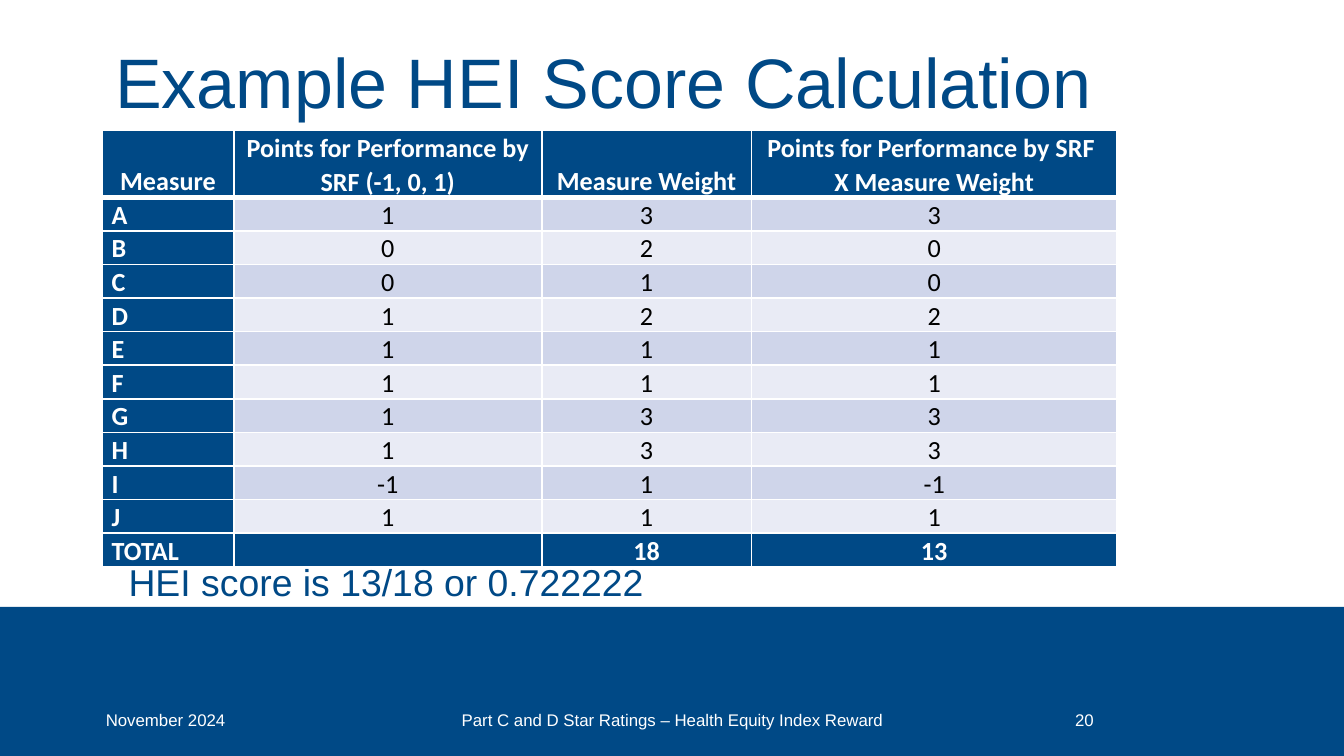
from copy import deepcopy

from lxml.etree import SubElement
from pptx import Presentation
from pptx.dml.color import RGBColor as RGB
from pptx.enum.shapes import MSO_SHAPE as Shape
from pptx.enum.text import MSO_ANCHOR as Anchor, PP_ALIGN as Align
from pptx.oxml.ns import qn
from pptx.util import Cm, Pt

COLORS = {"navy": "004986", "white": "FFFFFF", "black": "000000",
          "odd": "CFD5EA", "even": "E9EBF5"}
HEADERS = ["Measure", "Points for Performance by SRF (-1, 0, 1)",
           "Measure Weight", "Points for Performance by SRF \vX Measure Weight"]
SCORES = [("A", 1, 3), ("B", 0, 2), ("C", 0, 1), ("D", 1, 2), ("E", 1, 1),
          ("F", 1, 1), ("G", 1, 3), ("H", 1, 3), ("I", -1, 1), ("J", 1, 1)]
COLUMNS = [2.49, 5.82, 3.96, 6.91]
HEADER_HEIGHT, ROW_HEIGHT = 1.14, 0.56


def rgb(name):
    return RGB.from_string(COLORS[name])


def write(tf, text, size=9, font="Arial", color="white", bold=False,
          align=Align.LEFT, spacing=None):
    p = tf.paragraphs[0]
    p.text = text
    p.alignment = align
    p.line_spacing = spacing
    for r in p.runs:
        r.font.size, r.font.name, r.font.bold = Pt(size), font, bold
        r.font.color.rgb = rgb(color)
    for br in p._p.findall(qn("a:br")):
        br.append(deepcopy(p.runs[0]._r.rPr))
    if not text:
        SubElement(p._p, qn("a:endParaRPr"), sz=str(size * 100))


class Deck:
    def __init__(self):
        self.prs = Presentation()
        self.prs.slide_width, self.prs.slide_height = Cm(25.4), Cm(14.29)
        self.s = self.prs.slides.add_slide(self.prs.slide_layouts[6])

    def band(self, x, y, w, h, color):
        sp = self.s.shapes.add_shape(Shape.RECTANGLE, Cm(x), Cm(y), Cm(w), Cm(h))
        sp.shadow.inherit = False
        sp.fill.solid()
        sp.fill.fore_color.rgb = rgb(color)
        sp.line.fill.background()

    def text(self, x, y, w, h, text, anchor=Anchor.MIDDLE, **style):
        sp = self.s.shapes.add_textbox(Cm(x), Cm(y), Cm(w), Cm(h))
        tf = sp.text_frame
        tf.word_wrap = True
        tf.vertical_anchor = anchor
        write(tf, text, **style)

    def cell(self, cell, text, fill, borders, **style):
        cell.margin_left = cell.margin_right = Cm(0.18)
        cell.margin_top = cell.margin_bottom = 0
        cell.vertical_anchor = Anchor.BOTTOM
        tcPr = cell._tc.get_or_add_tcPr()
        for side, width in borders.items():
            ln = SubElement(tcPr, qn(f"a:ln{side}"), w=str(Pt(width)))
            paint = SubElement(ln, qn("a:solidFill"))
            SubElement(paint, qn("a:srgbClr"), val=COLORS["white"])
        cell.fill.solid()
        cell.fill.fore_color.rgb = rgb(fill)
        write(cell.text_frame, text, size=14, font="Calibri", spacing=1.07, **style)

    def table(self, x, y, rows, widths):
        heights = [HEADER_HEIGHT] + [ROW_HEIGHT] * (len(rows) - 1)
        table = self.s.shapes.add_table(len(rows), len(widths), Cm(x), Cm(y),
                                        Cm(sum(widths)), Cm(sum(heights))).table
        for column, width in zip(table.columns, widths):
            column.width = Cm(width)
        for row, height in zip(table.rows, heights):
            row.height = Cm(height)
        for i, values in enumerate(rows):
            borders = {"L": 1, "R": 1, "T": 3 if i == 1 else 1,
                       "B": 3 if i == 0 else 1}
            for j, value in enumerate(values):
                strong = j == 0 or i in (0, len(rows) - 1)
                stripe = "odd" if i % 2 else "even"
                self.cell(table.cell(i, j), str(value),
                          "navy" if strong else stripe, borders,
                          color="white" if strong else "black", bold=strong,
                          align=Align.LEFT if j == 0 and i else Align.CENTER)


def main():
    deck = Deck()
    deck.band(0, 11.47, 25.4, 2.82, "navy")
    deck.text(1.93, 0.91, 20.57, 1.55, "Example HEI Score Calculation",
              anchor=Anchor.BOTTOM, size=37.5, color="navy", spacing=0.9)
    deck.text(1.75, 13.23, 5.72, 0.76, "November 2024")
    deck.text(8.41, 13.23, 8.59, 0.76,
              "Part C and D Star Ratings – Health Equity Index Reward",
              align=Align.CENTER)
    deck.text(20.07, 13.23, 0.97, 0.76, "20")
    deck.text(2.18, 10.44, 20.96, 1.12, "HEI score is 13/18 or 0.722222",
              anchor=Anchor.TOP, size=20, color="navy")
    body = [(name, points, weight, points * weight)
            for name, points, weight in SCORES]
    total = ("TOTAL", "", sum(row[2] for row in body), sum(row[3] for row in body))
    deck.table(1.93, 2.46, [HEADERS, *body, total], COLUMNS)
    deck.prs.save("out.pptx")


if __name__ == "__main__":
    main()
